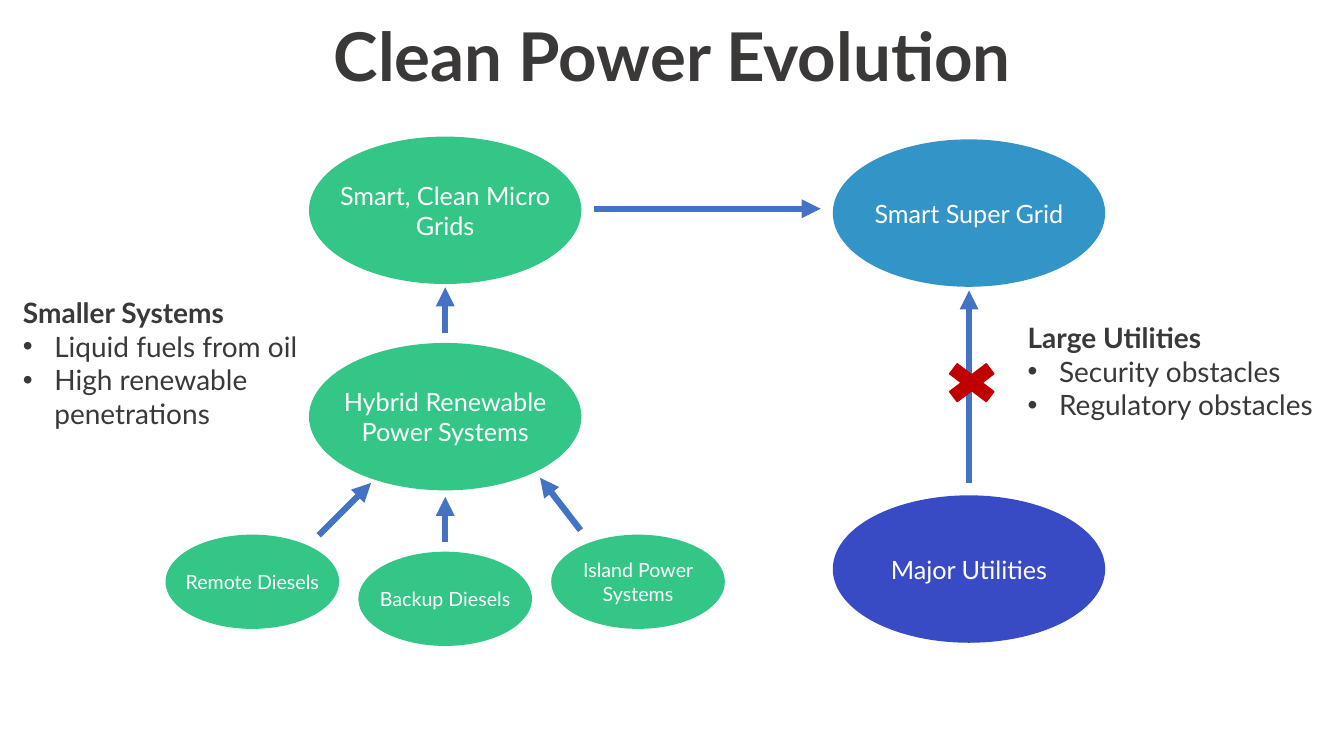
from lxml.etree import SubElement
from pptx import Presentation
from pptx.dml.color import RGBColor
from pptx.enum.shapes import MSO_CONNECTOR as Link, MSO_SHAPE as Shape
from pptx.enum.text import MSO_ANCHOR as Anchor, PP_ALIGN as Align
from pptx.oxml.ns import qn
from pptx.util import Cm, Pt

COLORS = {
    "text": "3B3838", "white": "FFFFFF", "green": "34C687", "sky": "3394C7",
    "indigo": "394AC5", "arrow": "4472C4", "cross": "C00000",
}
LEFT, RIGHT, STEP = 11.22, 24.42, 4.86
BIG = (6.83, 3.68, 6.4, 18)
SMALL = (4.34, 2.34, 4.06, 14)


def color(name):
    return RGBColor.from_string(COLORS[name])


class Deck:
    font = "Lato"

    def __init__(self):
        self.prs = Presentation()
        self.prs.slide_width, self.prs.slide_height = Cm(33.87), Cm(19.05)
        self.slide = self.prs.slides.add_slide(self.prs.slide_layouts[6])
        self.shapes = self.slide.shapes

    def style(self, para, size, tone, bold=False):
        for run in para.runs:
            font = run.font
            font.name, font.size, font.bold = self.font, Pt(size), bold
            font.color.rgb = color(tone)

    def text(self, box, words, size, tone="text", bold=False, parent=None):
        """Add a wrapped text box and return its frame."""
        shapes = parent or self.shapes
        frame = shapes.add_textbox(*map(Cm, box)).text_frame
        frame.word_wrap = True
        frame.text = words
        for para in frame.paragraphs:
            self.style(para, size, tone, bold)
        return frame

    def title(self, words):
        para = self.text((0.97, 0.46, 31.95, 2.49), words, 48, bold=True).paragraphs[0]
        para.alignment = Align.CENTER
        para.line_spacing = 0.9

    def shape(self, kind, box, tone, parent=None):
        item = (parent or self.shapes).add_shape(kind, *map(Cm, box))
        item.shadow.inherit = False
        item.fill.solid()
        item.fill.fore_color.rgb = item.line.color.rgb = color(tone)
        item.line.width = Pt(1)

    def node(self, x, y, words, kind=BIG, tone="green", lines=1):
        """Group an ellipse with its caption, both centred on x, y."""
        wide, high, span, size = kind
        group = self.shapes.add_group_shape().shapes
        self.shape(Shape.OVAL, (x - wide / 2, y - high / 2, wide, high), tone, group)
        tall = 0.25 + lines * size * 1.2 * 2.54 / 72
        box = (x - span / 2, y - tall / 2, span, tall)
        frame = self.text(box, words, size, "white", parent=group)
        frame.vertical_anchor = Anchor.MIDDLE
        frame.paragraphs[0].alignment = Align.CENTER

    def arrow(self, *ends):
        item = self.shapes.add_connector(Link.STRAIGHT, *map(Cm, ends))
        item.line.color.rgb = color("arrow")
        item.line.width = Pt(4.5)
        SubElement(item.line._get_or_add_ln(), qn("a:tailEnd"), type="triangle")
        SubElement(item._element.spPr, qn("a:effectLst"))

    def note(self, box, head, points):
        """Add a bold heading with bulleted points below it."""
        frame = self.text(box, head, 20, bold=True)
        for point in points:
            para = frame.add_paragraph()
            para.text = point
            props = para._p.get_or_add_pPr()
            props.set("marL", str(Cm(0.79)))
            props.set("indent", str(-Cm(0.79)))
            SubElement(props, qn("a:buFont"), typeface="Arial")
            SubElement(props, qn("a:buChar"), char="•")
            self.style(para, 20, "text")


def main():
    deck = Deck()
    deck.title("Clean Power Evolution")

    deck.node(LEFT, 5.3, "Smart, Clean Micro Grids", lines=2)
    deck.node(RIGHT, 5.37, "Smart Super Grid", tone="sky")
    deck.node(LEFT, 10.5, "Hybrid Renewable Power Systems", lines=2)
    deck.node(RIGHT, 14.34, "Major Utilities", tone="indigo")
    deck.node(LEFT - STEP, 14.66, "Remote Diesels", SMALL)
    deck.node(LEFT, 15.09, "Backup Diesels", SMALL)
    deck.node(LEFT + STEP, 14.66, "Island Power Systems", SMALL, lines=2)

    for ends in (
        (LEFT, 8.38, LEFT, 7.24),
        (8.03, 13.49, 9.35, 12.17),
        (14.63, 13.36, 13.61, 12.04),
        (LEFT, 13.67, LEFT, 12.52),
        (14.96, 5.26, 20.68, 5.26),
        (RIGHT, 12.17, RIGHT, 7.32),
    ):
        deck.arrow(*ends)

    deck.note((0.33, 7.32, 7.8, 3.68), "Smaller Systems",
              ["Liquid fuels from oil", "High renewable penetrations"])
    deck.note((25.65, 7.95, 8.1, 2.82), "Large Utilities",
              ["Security obstacles", "Regulatory obstacles"])
    deck.shape(Shape.MATH_MULTIPLY, (23.6, 8.97, 1.78, 1.35), "cross")
    deck.prs.save("out.pptx")


if __name__ == "__main__":
    main()
